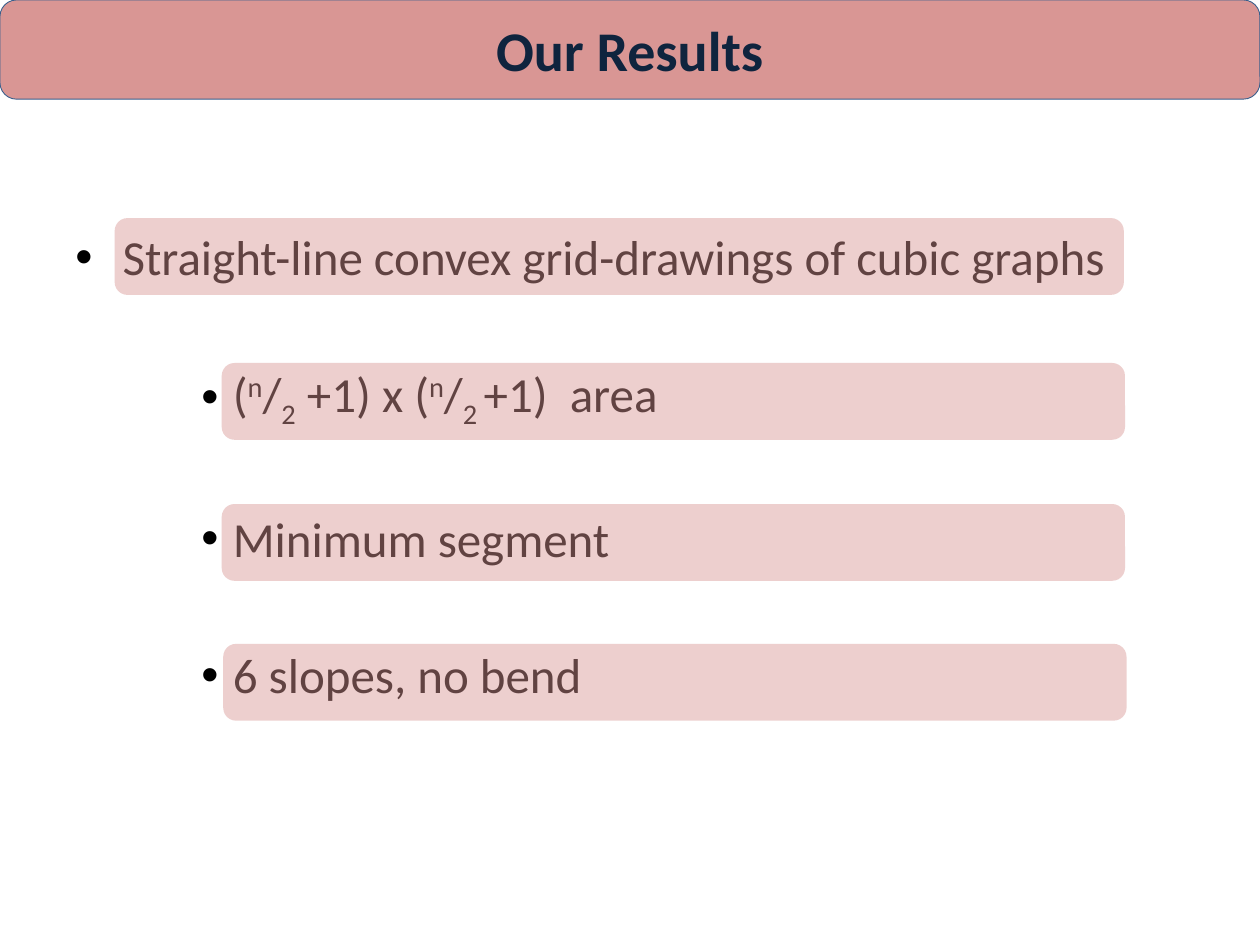
from lxml import etree
from pptx import Presentation
from pptx.enum import shapes, text
from pptx.oxml import ns
from pptx.util import Pt

TITLE = "Our Results"
SUP, SUB = 30000, -25000
# Each result: level, runs as (wording, baseline shift)
RESULTS = [
    (0, [("Straight-line convex grid-drawings of cubic graphs", 0)]),
    (2, [("(", 0), ("n", SUP), ("/", 0), ("2", SUB), (" +1) x (", 0),
         ("n", SUP), ("/", 0), ("2 ", SUB), ("+1)  area", 0)]),
    (2, [("Minimum segment", 0)]),
    (2, [("6 slopes, no bend", 0)]),
]
# Translucent bars over the results: left, top, width
BARS = [(65.5, 124.6, 576.7), (126.7, 207.4, 516.2),
        (126.7, 288, 516.2), (127.6, 367.9, 516.2)]
BAR_HEIGHT, BAR_ALPHA = 43.9, 45000
INDENTS = {0: (27, -27), 2: (90, -18)}  # level: left margin, first line
RESULT_GAP = 44.5
FONT = "Calibri"
COLORS = {"rose": "D99694", "edge": "3A5F8C", "navy": "0F243E", "ink": "000000"}


def color(name):
    return RGBColor.from_string(COLORS[name])


from pptx.dml.color import RGBColor

deck = Presentation()
deck.slide_width, deck.slide_height = Pt(720), Pt(540)
slide = deck.slides.add_slide(deck.slide_layouts[6])


def add_rose_bar(left, top, width, height):
    bar = slide.shapes.add_shape(shapes.MSO_SHAPE.ROUNDED_RECTANGLE,
                                 Pt(left), Pt(top), Pt(width), Pt(height))
    bar.shadow.inherit = False
    bar.fill.solid()
    bar.fill.fore_color.rgb = color("rose")
    return bar


def style(run, size, ink, bold=False):
    run.font.name, run.font.size, run.font.bold = FONT, Pt(size), bold
    run.font.color.rgb = color(ink)


# Title banner
banner = add_rose_bar(0, 0, 720, 56.7)
banner.line.color.rgb = color("edge")
banner.line.width = Pt(0.5)
banner.text_frame.text = TITLE
banner.text_frame.vertical_anchor = text.MSO_ANCHOR.MIDDLE
heading = banner.text_frame.paragraphs[0]
heading.alignment = text.PP_ALIGN.CENTER
style(heading.runs[0], 32, "navy", bold=True)

# Bulleted results
body = slide.shapes.add_textbox(Pt(36), Pt(126), Pt(648), Pt(356.4)).text_frame
body.word_wrap = True
for index, (level, parts) in enumerate(RESULTS):
    result = body.add_paragraph() if index else body.paragraphs[0]
    result.level = level
    result.space_before = Pt(RESULT_GAP if index else 0)
    margin, first_line = INDENTS[level]
    props = result._p.get_or_add_pPr()
    props.set("marL", str(Pt(margin)))
    props.set("indent", str(Pt(first_line)))
    etree.SubElement(props, ns.qn("a:buFont")).set("typeface", "Arial")
    etree.SubElement(props, ns.qn("a:buChar")).set("char", "•")
    for wording, baseline in parts:
        run = result.add_run()
        run.text = wording
        style(run, 28, "ink")
        if baseline:
            run.font._element.set("baseline", str(baseline))

# Translucent bars on top of the results
for left, top, width in BARS:
    bar = add_rose_bar(left, top, width, BAR_HEIGHT)
    bar.line.fill.background()
    tint = bar._element.spPr.find(ns.qn("a:solidFill"))[0]
    etree.SubElement(tint, ns.qn("a:alpha")).set("val", str(BAR_ALPHA))

deck.save("out.pptx")
